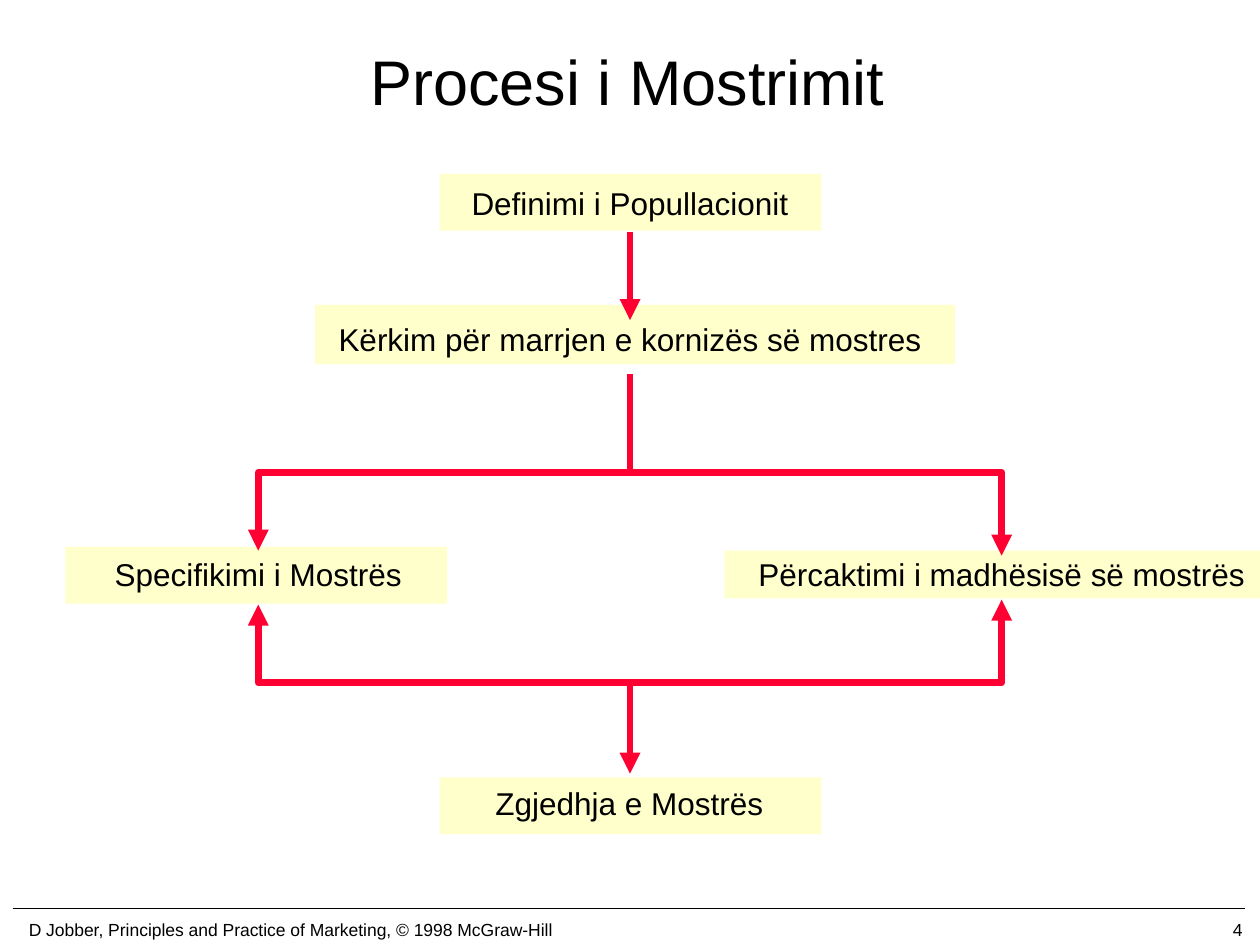
import dataclasses
import typing

import pptx
import pptx.dml.color
import pptx.enum.shapes
import pptx.enum.text
import pptx.oxml
import pptx.oxml.ns
import pptx.util

Inches = pptx.util.Inches
Align = pptx.enum.text.PP_ALIGN
Anchor = pptx.enum.text.MSO_ANCHOR
Point = tuple[float, float]

COLORS = {"ink": "000000", "box": "FFFFCC", "arrow": "FF0033"}
FONT = "Arial"
MID, LEFT, RIGHT = 5, 2.05, 7.95


@dataclasses.dataclass
class Area:
    left: float
    top: float
    width: float
    height: float

    def emu(self) -> list[int]:
        return [Inches(v) for v in dataclasses.astuple(self)]


@dataclasses.dataclass
class Step:
    text: str
    box: Area
    label: Area


@dataclasses.dataclass
class Link:
    points: list[Point]
    ends: tuple[str, ...] = ()
    color: str = "arrow"
    width: float = 4


STEPS = [
    Step("Definimi i Popullacionit",
         Area(3.49, 1.38, 3.03, 0.45), Area(3.63, 1.41, 2.74, 0.4)),
    Step("Kërkim për marrjen e kornizës së mostres",
         Area(2.5, 2.42, 5.08, 0.47), Area(2.48, 2.49, 5.04, 0.4)),
    Step("Specifikimi i Mostrës",
         Area(0.52, 4.34, 3.03, 0.45), Area(0.78, 4.36, 2.54, 0.4)),
    Step("Përcaktimi i madhësisë së mostrës",
         Area(5.75, 4.37, 4.25, 0.38), Area(5.88, 4.36, 4.14, 0.4)),
    Step("Zgjedhja e Mostrës",
         Area(3.49, 6.17, 3.03, 0.45), Area(3.8, 6.17, 2.39, 0.4)),
]
BOTH = ("headEnd", "tailEnd")
LINKS = [
    Link([(LEFT, 4.37), (LEFT, 3.75), (RIGHT, 3.75), (RIGHT, 4.41)], BOTH),
    Link([(MID, 3.78), (MID, 2.97)]),
    Link([(LEFT, 4.8), (LEFT, 5.42), (RIGHT, 5.42), (RIGHT, 4.76)], BOTH),
    Link([(MID, 5.44), (MID, 6.14)], ("tailEnd",)),
    Link([(MID, 1.84), (MID, 2.54)], ("tailEnd",)),
]


def paint(name: str) -> pptx.dml.color.RGBColor:
    return pptx.dml.color.RGBColor.from_string(COLORS[name])


def write(frame: typing.Any, text: str, size: float, align: Align,
          anchor: Anchor, wrap: bool = False) -> None:
    frame.text = text
    frame.word_wrap = wrap
    frame.vertical_anchor = anchor
    para = frame.paragraphs[0]
    para.alignment = align
    para.font.size = pptx.util.Pt(size)
    para.font.name = FONT
    para.font.color.rgb = paint("ink")


def add_text(slide: typing.Any, area: Area, text: str, size: float,
             align: Align = Align.CENTER, anchor: Anchor = Anchor.TOP) -> None:
    frame = slide.shapes.add_textbox(*area.emu()).text_frame
    write(frame, text, size, align, anchor)


def add_box(slide: typing.Any, area: Area) -> None:
    kind = pptx.enum.shapes.MSO_SHAPE.RECTANGLE
    box = slide.shapes.add_shape(kind, *area.emu())
    box.shadow.inherit = False
    box.fill.solid()
    box.fill.fore_color.rgb = paint("box")
    box.line.fill.background()


def add_link(slide: typing.Any, link: Link) -> None:
    spots = [(Inches(x), Inches(y)) for x, y in link.points]
    if len(spots) == 2:
        kind = pptx.enum.shapes.MSO_CONNECTOR.STRAIGHT
        shape = slide.shapes.add_connector(kind, *spots[0], *spots[1])
    else:
        path = slide.shapes.build_freeform(*spots[0])
        path.add_line_segments(spots[1:], close=False)
        shape = path.convert_to_shape()
        shape.fill.background()
    shape.line.color.rgb = paint(link.color)
    shape.line.width = pptx.util.Pt(link.width)

    # Round joins, arrowheads and no shadow
    props = shape.line._get_or_add_ln()
    make = pptx.oxml.ns.qn
    props.append(props.makeelement(make("a:round"), {}))
    for end in link.ends:
        props.append(props.makeelement(make(f"a:{end}"), {"type": "triangle"}))
    outer = props.getparent()
    outer.append(outer.makeelement(make("a:effectLst"), {}))


def main() -> None:
    deck = pptx.Presentation()
    deck.slide_width, deck.slide_height = Inches(10), Inches(7.5)
    slide = deck.slides.add_slide(deck.slide_layouts[5])

    # Title
    title = slide.shapes.title
    spot = Area(0.73, 0.01, 8.5, 1.25).emu()
    title.left, title.top, title.width, title.height = spot
    write(title.text_frame, "Procesi i Mostrimit", 36, Align.CENTER,
          Anchor.MIDDLE, wrap=True)

    # Footer
    add_link(slide, Link([(0.1, 7.21), (9.88, 7.21)], color="ink", width=1))
    add_text(slide, Area(7.88, 7.25, 2.08, 0.25), "4", 10,
             Align.RIGHT, Anchor.MIDDLE)
    add_text(slide, Area(0, 7.25, 4.61, 0.25),
             "D Jobber, Principles and Practice of Marketing, "
             "© 1998 McGraw-Hill", 10, anchor=Anchor.MIDDLE)

    # Steps and the arrows between them
    for step in STEPS:
        add_box(slide, step.box)
        add_text(slide, step.label, step.text, 18)
    for link in LINKS:
        add_link(slide, link)

    deck.save("out.pptx")


if __name__ == "__main__":
    main()
